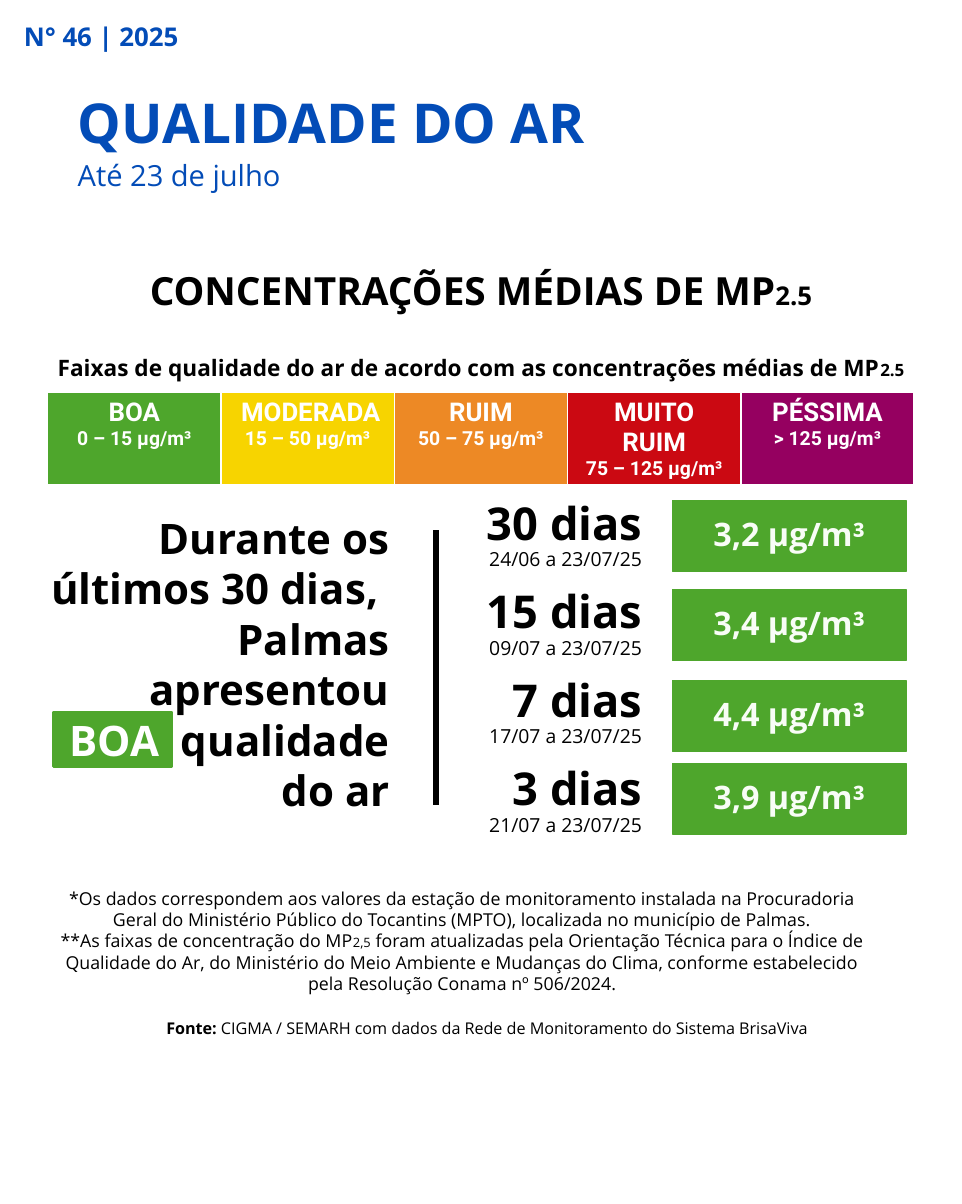
from lxml import etree
from pptx import Presentation
from pptx import util as u
from pptx.dml.color import RGBColor
from pptx.enum import shapes, text
from pptx.oxml import ns

COLORS = {
    "blue": "034CB7", "black": "000000", "white": "FFFFFF", "pale": "F8FDF6",
    "good": "4EA62C", "moderate": "F7D400", "bad": "ED8925",
    "very_bad": "CB0912", "worst": "950060",
}
LEFT, CENTER, RIGHT = text.PP_ALIGN.LEFT, text.PP_ALIGN.CENTER, text.PP_ALIGN.RIGHT
MIDDLE, TOP = text.MSO_ANCHOR.MIDDLE, text.MSO_ANCHOR.TOP
PAGE_WIDTH = 8.27


def write(frame, paragraphs, size, color="black", bold=False, align=CENTER,
          anchor=MIDDLE, spacing=1.0, font="Open Sans"):
    """Fill a frame; each paragraph is a list of (words, format changes)."""
    frame.word_wrap = True
    frame.auto_size = text.MSO_AUTO_SIZE.NONE
    frame.vertical_anchor = anchor
    for number, spans in enumerate(paragraphs):
        para = frame.paragraphs[0] if number == 0 else frame.add_paragraph()
        para.alignment = align
        para.line_spacing = spacing
        for words, changes in spans:
            if words == "\n":
                para.add_line_break()
                continue
            span = para.add_run()
            span.text = words
            span.font.name = font
            span.font.size = u.Pt(changes.get("size", size))
            span.font.bold = changes.get("bold", bold)
            span.font.color.rgb = RGBColor.from_string(COLORS[changes.get("color", color)])


def add_box(left, top, width, height, fill=None, line=0.75):
    """Add a text box, or a rectangle when a fill is named."""
    place = [u.Inches(value) for value in (left, top, width, height)]
    if fill is None:
        return page.shapes.add_textbox(*place)
    box = page.shapes.add_shape(shapes.MSO_SHAPE.RECTANGLE, *place)
    box.shadow.inherit = False
    box.fill.solid()
    box.fill.fore_color.rgb = RGBColor.from_string(COLORS[fill])
    box.line.color.rgb = RGBColor.from_string(COLORS[fill])
    box.line.width = u.Pt(line)
    return box


deck = Presentation()
deck.slide_width, deck.slide_height = u.Inches(PAGE_WIDTH), u.Inches(10.35)
page = deck.slides.add_slide(deck.slide_layouts[5])

# Heading
issue = add_box(0, 0.06, 1.74, 0.54)
write(issue.text_frame, [[("N° 46 | 2025", {})]], 16, "blue", True, spacing=0.9)

title = page.shapes.title
title.left, title.top = u.Inches(0.57), u.Inches(0.65)
title.width, title.height = u.Inches(7.13), u.Inches(0.87)
write(title.text_frame, [[("QUALIDADE DO AR", {})]], 34, "blue", True, LEFT, spacing=0.9)

subtitle = add_box(0.57, 1.25, 7.13, 0.54)
write(subtitle.text_frame, [[("Até 23 de julho", {})]], 18, "blue", align=LEFT, spacing=0.9)

section = add_box(0, 2.18, PAGE_WIDTH, 0.63)
write(section.text_frame,
      [[("CONCENTRAÇÕES MÉDIAS DE MP", {}), ("2.5", {"size": 16})]], 24, bold=True)

caption = add_box(0, 2.96, PAGE_WIDTH, 0.39)
write(caption.text_frame,
      [[("Faixas de qualidade do ar de acordo com as concentrações médias de MP", {}),
        ("2.5", {"size": 10.5})]], 14, bold=True)

# Scale of air quality bands
bands = [
    ("BOA", "0 – 15 µg/m³", "good"),
    (" MODERADA", "15 – 50 µg/m³", "moderate"),
    ("RUIM", "50 – 75 µg/m³", "bad"),
    ("MUITO RUIM", "75 – 125 µg/m³", "very_bad"),
    ("PÉSSIMA", "> 125 µg/m³", "worst"),
]
scale = page.shapes.add_table(1, len(bands), u.Inches(0.41), u.Inches(3.37),
                              u.Inches(7.45), u.Inches(0.55)).table
scale.first_row = scale.horz_banding = False
for cell, (band, limits, color) in zip(scale.rows[0].cells, bands):
    write(cell.text_frame, [[(band, {})], [(limits, {"size": 12})]], 16, "white", True,
          font="Roboto")
    cell.vertical_anchor = TOP
    properties = cell._tc.get_or_add_tcPr()
    for side, width in (("L", 1), ("R", 1), ("T", 1), ("B", 3)):
        border = etree.SubElement(properties, ns.qn(f"a:ln{side}"), w=str(u.Pt(width)))
        solid = etree.SubElement(border, ns.qn("a:solidFill"))
        etree.SubElement(solid, ns.qn("a:srgbClr"), val=COLORS["white"])
    cell.fill.solid()
    cell.fill.fore_color.rgb = RGBColor.from_string(COLORS[color])

# Summary with its highlighted word
add_box(0.46, 6.12, 1.02, 0.47, "good", 1.5)
summary = add_box(0.33, 4.1, 3.12, 3.21)
write(summary.text_frame,
      [[("Durante os últimos 30 dias, ", {}), ("\n", {}), ("Palmas apresentou ", {}),
        ("BOA ", {"color": "white"}), (" qualidade do ar", {})]],
      26, bold=True, align=RIGHT)

divider = page.shapes.add_connector(shapes.MSO_CONNECTOR.STRAIGHT, u.Inches(3.75),
                                    u.Inches(4.56), u.Inches(3.75), u.Inches(6.92))
divider.line.color.rgb = RGBColor.from_string(COLORS["black"])
divider.line.width = u.Pt(4)
etree.SubElement(divider._element.spPr, ns.qn("a:effectLst"))

# Averages for each period
averages = [
    ("30 dias", "24/06 a 23/07/25", "3,2 µg/m³", 4.3),
    ("15 dias", "09/07 a 23/07/25", "3,4 µg/m³", 5.07),
    ("7 dias", "17/07 a 23/07/25", "4,4 µg/m³", 5.85),
    ("3 dias", "21/07 a 23/07/25", "3,9 µg/m³", 6.56),
]
for row, (period, dates, average, top) in enumerate(averages):
    label = add_box(3.71, 4.23 + 0.76 * row, 1.91, 0.76)
    write(label.text_frame, [[(period, {})], [(dates, {"size": 12, "bold": False})]],
          28, bold=True, align=RIGHT, spacing=0.9)
    card = add_box(5.78, top, 2.01, 0.61, "good")
    write(card.text_frame, [[(average, {})]], 20, "pale", True, spacing=0.9)

# Notes and source
notes = add_box(0.35, 7.58, 7.25, 1.03)
write(notes.text_frame, [
    [("*Os dados correspondem aos valores da estação de monitoramento instalada na "
      "Procuradoria Geral do Ministério Público do Tocantins (MPTO), localizada no "
      "município de Palmas.", {})],
    [("**As faixas de concentração do MP", {}), ("2,5", {"size": 8}),
     (" foram atualizadas pela Orientação Técnica para o Índice de Qualidade do Ar, do "
      "Ministério do Meio Ambiente e Mudanças do Clima, conforme estabelecido pela "
      "Resolução Conama nº 506/2024.", {})],
], 11, anchor=TOP)

source = add_box(0, 8.7, PAGE_WIDTH, 0.27)
source.text_frame.margin_left = u.Inches(0.2)
write(source.text_frame,
      [[("Fonte: ", {"bold": True}),
        ("CIGMA / SEMARH com dados da Rede de Monitoramento do Sistema BrisaViva", {})]], 10)

deck.save("out.pptx")
